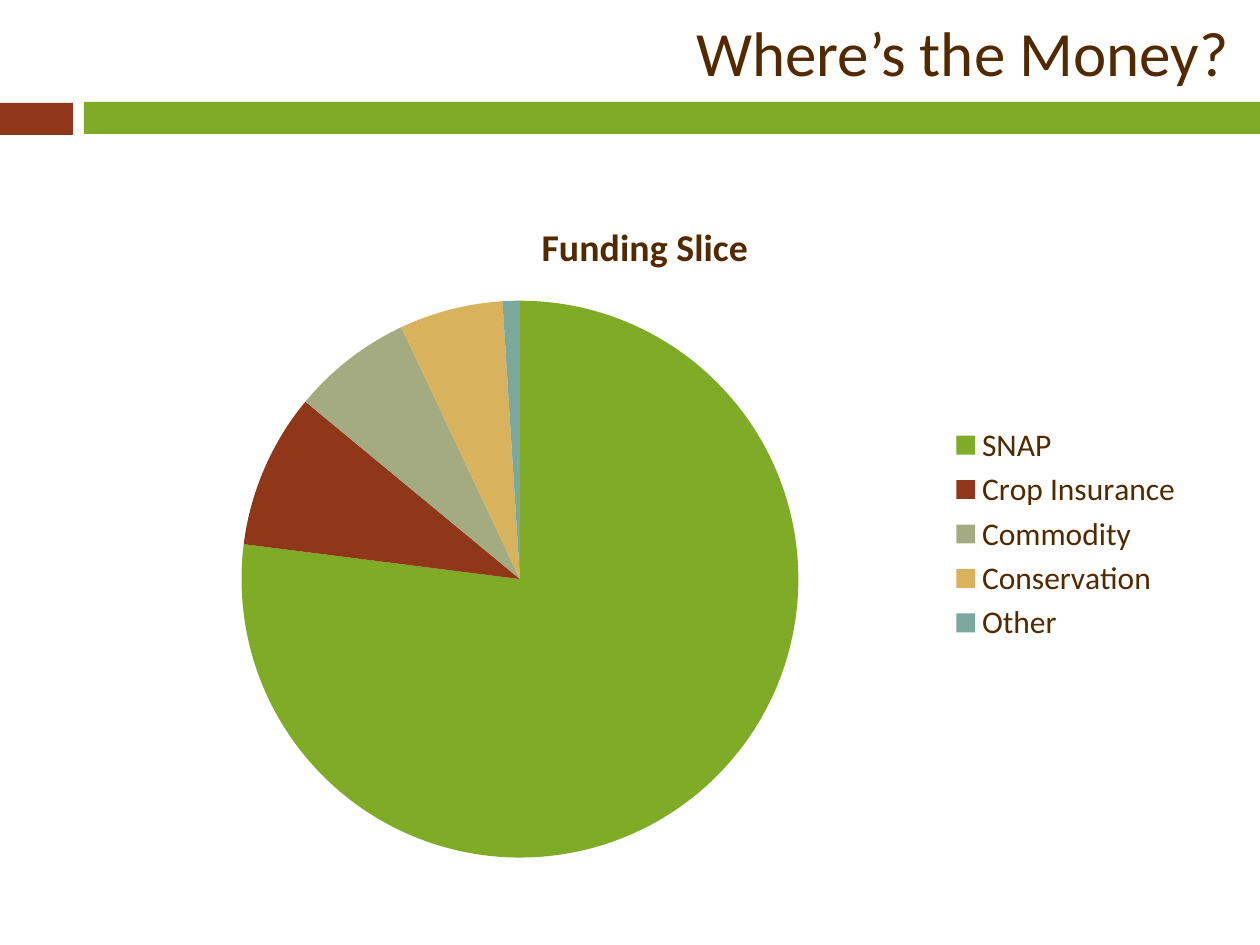
from pptx import Presentation
from pptx import util as u
from pptx.chart.data import CategoryChartData
from pptx.dml.color import RGBColor
from pptx.enum import chart as charts, shapes, text

PX = 914400 / 126
FONT = "Calibri"
BROWN = RGBColor(0x53, 0x2A, 0x00)
GREEN = RGBColor(0x7F, 0xAB, 0x26)
RUST = RGBColor(0x90, 0x37, 0x1A)
SAGE = RGBColor(0xA5, 0xAB, 0x81)
GOLD = RGBColor(0xD8, 0xB2, 0x5C)
TEAL = RGBColor(0x7B, 0xA7, 0x9D)
FUNDING = [
    ("SNAP", 77, GREEN),
    ("Crop Insurance", 9, RUST),
    ("Commodity", 7, SAGE),
    ("Conservation", 6, GOLD),
    ("Other", 1, TEAL),
]


def px(*lengths):
    return [u.Emu(round(length * PX)) for length in lengths]


def style_font(font, size, bold=False):
    font.name = FONT
    font.size = u.Pt(size)
    font.bold = bold
    font.color.rgb = BROWN


def write_text(frame, content, size, bold=False, align=text.PP_ALIGN.CENTER):
    paragraph = frame.paragraphs[0]
    paragraph.alignment = align
    run = paragraph.add_run()
    run.text = content
    style_font(run.font, size, bold)


def add_bar(slide, box, color):
    shape = slide.shapes.add_shape(shapes.MSO_SHAPE.RECTANGLE, *px(*box))
    shape.shadow.inherit = False
    shape.fill.solid()
    shape.fill.fore_color.rgb = color
    shape.line.fill.background()


def add_header(slide, left, top, width, height):
    bar_height = 32
    bar_top = top + height - bar_height
    add_bar(slide, (left, bar_top, 73, bar_height), RUST)
    add_bar(slide, (left + 84, bar_top - 1, width - 84, bar_height), GREEN)
    title = slide.shapes.add_textbox(*px(left + 365, top + 8, 876, 86))
    title.text_frame.word_wrap = True
    title.text_frame.vertical_anchor = text.MSO_ANCHOR.MIDDLE
    write_text(title.text_frame, "Where’s the Money?", 36, align=text.PP_ALIGN.RIGHT)


def add_funding_pie(slide, *box):
    data = CategoryChartData()
    data.categories = [name for name, _, _ in FUNDING]
    data.add_series("Funding Slice", [value for _, value, _ in FUNDING])
    chart = slide.shapes.add_chart(charts.XL_CHART_TYPE.PIE, *px(*box), data).chart
    style_font(chart.font, 18)
    chart.has_title = True
    write_text(chart.chart_title.text_frame, "Funding Slice", 21.6, bold=True)
    chart.chart_title.include_in_layout = False
    chart.has_legend = True
    chart.legend.position = charts.XL_LEGEND_POSITION.RIGHT
    chart.legend.include_in_layout = False
    style_font(chart.legend.font, 18)
    plot = chart.plots[0]
    plot.vary_by_categories = True
    for index, (_, _, color) in enumerate(FUNDING):
        point = plot.series[0].points[index]
        point.format.fill.solid()
        point.format.fill.fore_color.rgb = color
        point.format.line.fill.background()


def main():
    presentation = Presentation()
    presentation.slide_width, presentation.slide_height = px(1260, 945)
    slide = presentation.slides.add_slide(presentation.slide_layouts[6])
    add_header(slide, 0, 0, 1260, 135)
    add_funding_pie(slide, 94, 193, 1102, 682)
    presentation.save("out.pptx")


if __name__ == "__main__":
    main()
